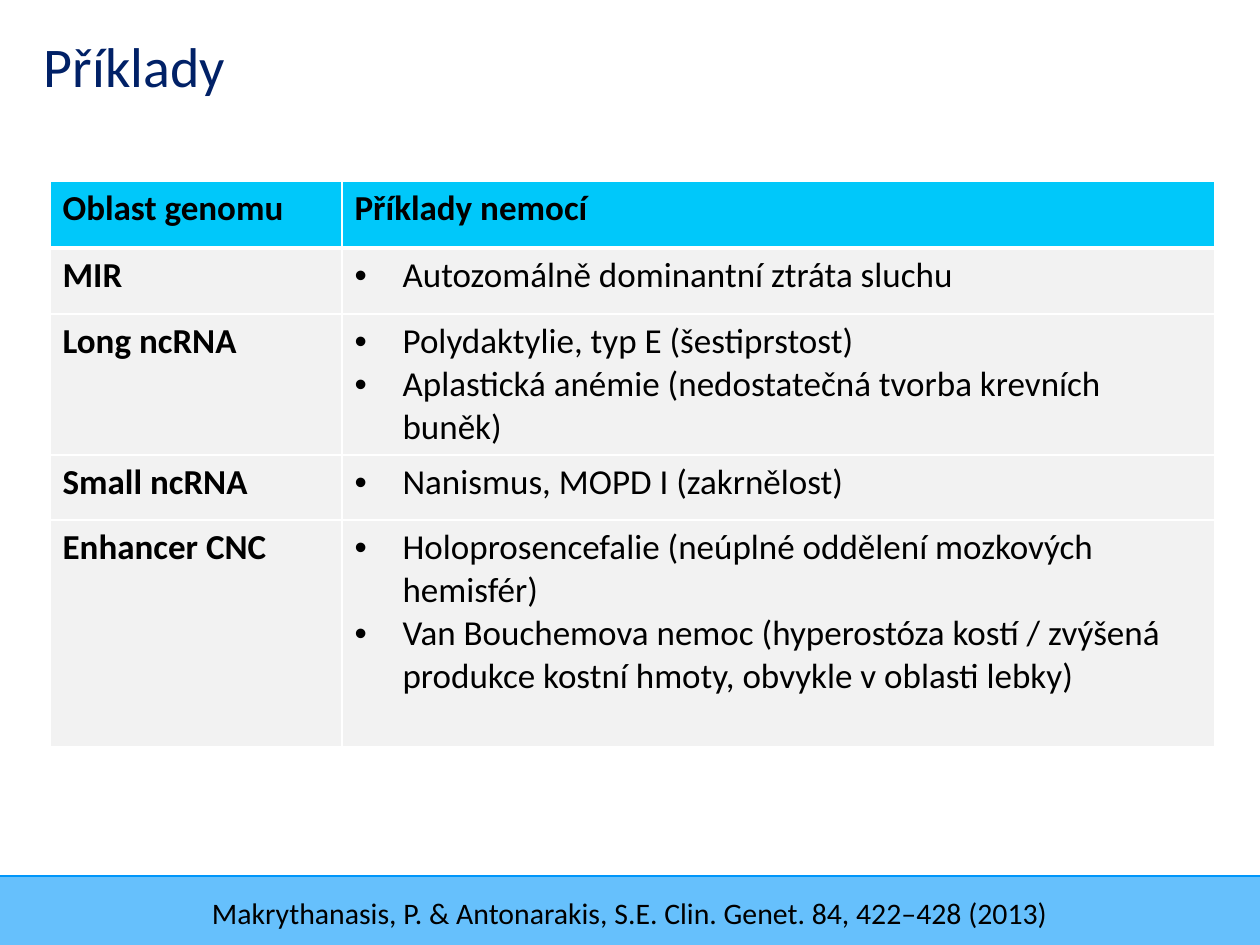
from dataclasses import dataclass
from typing import Any

from lxml import etree
from pptx import Presentation
from pptx.dml.color import RGBColor
from pptx.enum.shapes import MSO_CONNECTOR, MSO_SHAPE
from pptx.enum.text import MSO_ANCHOR, PP_ALIGN
from pptx.oxml.ns import qn
from pptx.util import Emu, Pt

RECTANGLE = MSO_SHAPE.RECTANGLE
STRAIGHT = MSO_CONNECTOR.STRAIGHT
TOP, BOTTOM = MSO_ANCHOR.TOP, MSO_ANCHOR.BOTTOM
LEFT, CENTER = PP_ALIGN.LEFT, PP_ALIGN.CENTER

WHITE = RGBColor(0xFF, 0xFF, 0xFF)
BLACK = RGBColor(0, 0, 0)
NAVY = RGBColor(0x01, 0x21, 0x67)
BLUE = RGBColor(0x00, 0x96, 0xFA)
CYAN = RGBColor(0x00, 0xC8, 0xFA)
PALE_GREY = RGBColor(0xF2, 0xF2, 0xF2)

EMU_PER_PX = 914400 / 126
SLIDE_WIDTH, SLIDE_HEIGHT = 1260, 945
FOOTER_TOP = 876
BULLET_INDENT = 48

HEADINGS = ("Oblast genomu", "Příklady nemocí")
DISEASES = {
    "MIR": ["Autozomálně dominantní ztráta sluchu"],
    "Long ncRNA": [
        "Polydaktylie, typ E (šestiprstost)",
        "Aplastická anémie (nedostatečná tvorba krevních buněk)",
    ],
    "Small ncRNA": ["Nanismus, MOPD I (zakrnělost)"],
    "Enhancer CNC": [
        "Holoprosencefalie (neúplné oddělení mozkových hemisfér)",
        "Van Bouchemova nemoc (hyperostóza kostí / zvýšená produkce "
        "kostní hmoty, obvykle v oblasti lebky)",
    ],
}
COLUMN_WIDTHS = (292, 873)
ROW_HEIGHTS = (67, 66, 141, 65, 227)


def px(length):
    return Emu(round(length * EMU_PER_PX))


def set_all(target, values):
    for name, value in values.items():
        setattr(target, name, value)


@dataclass
class SlideBuilder:
    slide: Any
    font: str = "Calibri"

    def add_run(self, paragraph, text, size, color=BLACK, bold=False):
        run = paragraph.add_run()
        run.text = text
        set_all(run.font, {"name": self.font, "size": Pt(size), "bold": bold})
        run.font.color.rgb = color

    def text(self, box, text, size, color=BLACK, anchor=TOP, align=LEFT, spacing=1.0):
        frame = self.slide.shapes.add_textbox(*map(px, box)).text_frame
        set_all(frame, {
            "word_wrap": True, "vertical_anchor": anchor,
            "margin_left": 0, "margin_right": 0,
            "margin_top": 0, "margin_bottom": 0,
        })
        paragraph = frame.paragraphs[0]
        set_all(paragraph, {"alignment": align, "line_spacing": spacing})
        self.add_run(paragraph, text, size, color)

    def band(self, box, color, opacity):
        """Draw a borderless rectangle with an opacity in percent."""
        band = self.slide.shapes.add_shape(RECTANGLE, *map(px, box))
        band.shadow.inherit = False
        band.line.fill.background()
        band.fill.solid()
        band.fill.fore_color.rgb = color
        tint = band._element.spPr.find(qn("a:solidFill"))[0]
        etree.SubElement(tint, qn("a:alpha"), val=str(opacity * 1000))

    def line(self, start, end, color, width):
        line = self.slide.shapes.add_connector(STRAIGHT, *map(px, start + end))
        line.line.color.rgb = color
        line.line.width = Pt(width)
        etree.SubElement(line._element.spPr, qn("a:effectLst"))

    def cell(self, cell, texts, fill, borders, bold=False, bulleted=False):
        properties = cell._tc.get_or_add_tcPr()
        for side, width in borders.items():
            edge = etree.SubElement(properties, qn(f"a:ln{side}"), w=str(Pt(width)))
            solid = etree.SubElement(edge, qn("a:solidFill"))
            etree.SubElement(solid, qn("a:srgbClr"), val=str(WHITE))
        cell.fill.solid()
        cell.fill.fore_color.rgb = fill

        frame = cell.text_frame
        for index, text in enumerate(texts):
            paragraph = frame.add_paragraph() if index else frame.paragraphs[0]
            if bulleted:
                layout = paragraph._p.get_or_add_pPr()
                layout.set("marL", str(px(BULLET_INDENT)))
                layout.set("indent", str(-px(BULLET_INDENT)))
                etree.SubElement(layout, qn("a:buFont"), typeface="Arial")
                etree.SubElement(layout, qn("a:buChar"), char="•")
            self.add_run(paragraph, text, 20, bold=bold)

    def table(self, left, top, headings, rows, widths, heights):
        """Fill a two-column table: bold row names and bulleted entries."""
        box = (left, top, sum(widths), sum(heights))
        table = self.slide.shapes.add_table(
            len(heights), len(widths), *map(px, box)).table
        table.horz_banding = False
        for column, width in zip(table.columns, widths):
            column.width = px(width)
        for row, height in zip(table.rows, heights):
            row.height = px(height)

        thin = {"L": 1, "R": 1, "T": 1, "B": 1}
        for column, heading in enumerate(headings):
            self.cell(table.cell(0, column), [heading], CYAN,
                      thin | {"B": 3}, bold=True)
        for row, (name, entries) in enumerate(rows.items(), start=1):
            borders = thin | {"T": 3 if row == 1 else 1}
            self.cell(table.cell(row, 0), [name], PALE_GREY, borders, bold=True)
            self.cell(table.cell(row, 1), entries, PALE_GREY, borders, bulleted=True)


def main():
    presentation = Presentation()
    set_all(presentation, {
        "slide_width": px(SLIDE_WIDTH), "slide_height": px(SLIDE_HEIGHT),
    })
    builder = SlideBuilder(
        presentation.slides.add_slide(presentation.slide_layouts[6]))

    builder.band((0, FOOTER_TOP, SLIDE_WIDTH, SLIDE_HEIGHT - FOOTER_TOP), BLUE, 60)
    builder.line((0, FOOTER_TOP), (SLIDE_WIDTH, FOOTER_TOP), BLUE, 1.5)
    builder.text((44, 25, 1046, 74), "Příklady", 32, NAVY, anchor=BOTTOM)
    builder.table(50, 181, HEADINGS, DISEASES, COLUMN_WIDTHS, ROW_HEIGHTS)
    builder.text(
        (0, 886, SLIDE_WIDTH, 43),
        "Makrythanasis, P. & Antonarakis, S.E. Clin. Genet. 84, 422–428 (2013)",
        17, align=CENTER, spacing=1.25)
    presentation.save("out.pptx")


if __name__ == "__main__":
    main()
